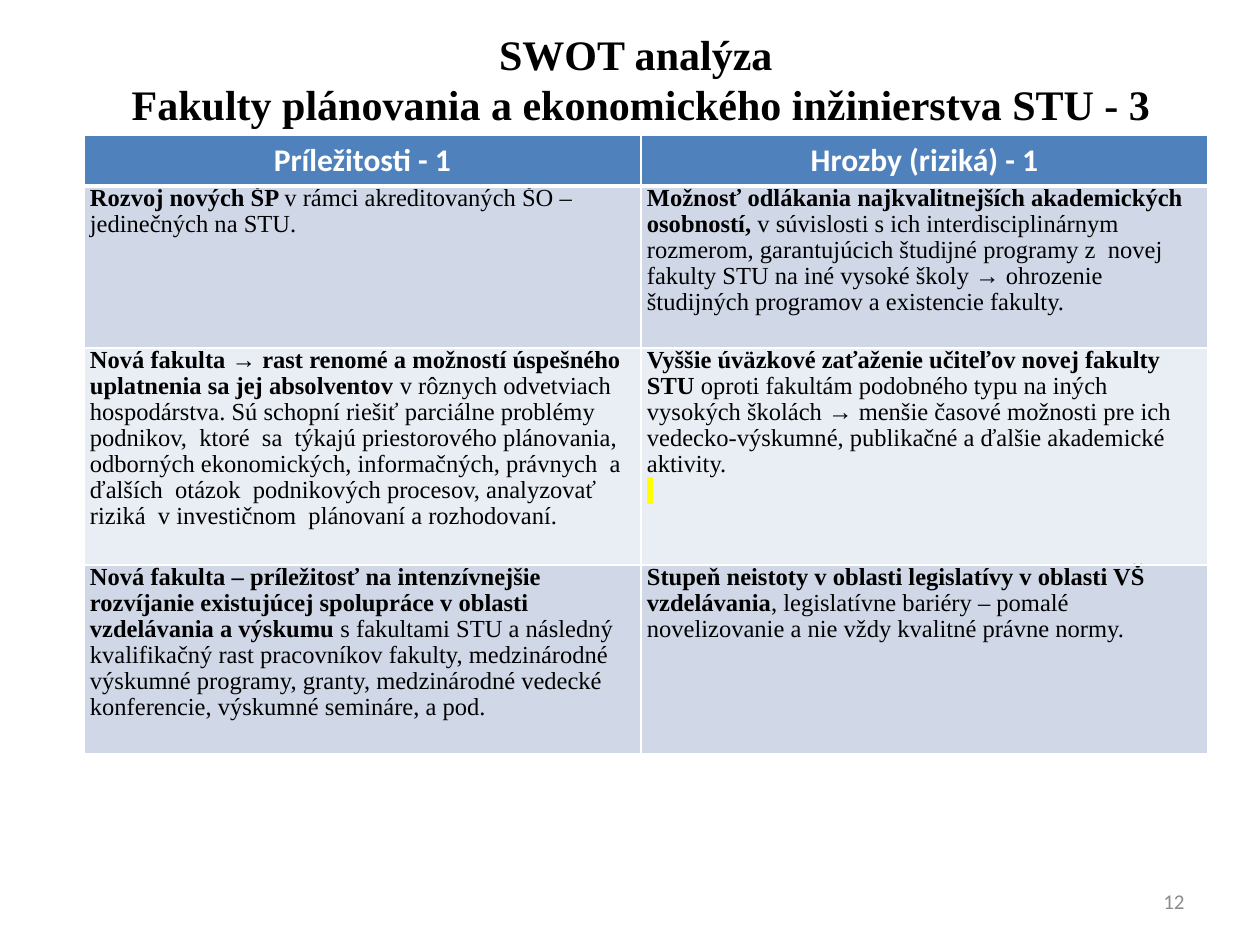
from dataclasses import dataclass

from lxml import etree
from pptx import Presentation
from pptx.dml.color import RGBColor
from pptx.enum.text import MSO_ANCHOR, MSO_AUTO_SIZE, PP_ALIGN
from pptx.oxml.ns import qn
from pptx.util import Emu, Pt

LEFT, CENTER, RIGHT = PP_ALIGN.LEFT, PP_ALIGN.CENTER, PP_ALIGN.RIGHT
TOP, MIDDLE = MSO_ANCHOR.TOP, MSO_ANCHOR.MIDDLE
NO_FIT = MSO_AUTO_SIZE.NONE
TITLE_ONLY = 5
PX = 914400 // 126


@dataclass(frozen=True)
class Theme:
    serif: str = "Times New Roman"
    sans: str = "Calibri"
    title_size: int = 24
    head_size: int = 18
    body_size: int = 14
    number_size: int = 12
    text: str = "000000"
    white: str = "FFFFFF"
    head: str = "4F81BD"
    bands: tuple = ("D0D8E8", "E9EDF4")
    muted: str = "8C8C8C"
    marker: str = "FFFF00"


T = Theme()

TITLE = ("SWOT analýza ",
         "Fakulty plánovania a ekonomického inžinierstva STU - 3")
HEADS = ("Príležitosti - 1", "Hrozby (riziká) - 1")
# Each cell: bold lead, regular rest, whether a marked line follows
ROWS = (
    (("Rozvoj nových ŠP ",
      "v rámci akreditovaných ŠO – jedinečných na STU.", False),
     ("Možnosť odlákania najkvalitnejších akademických osobností,",
      " v súvislosti s ich interdisciplinárnym rozmerom, garantujúcich "
      "študijné programy z  novej fakulty STU na iné vysoké školy → "
      "ohrozenie  študijných programov a existencie fakulty.", False)),
    (("Nová fakulta → rast renomé a možností úspešného uplatnenia sa jej "
      "absolventov ",
      "v rôznych odvetviach hospodárstva. Sú schopní riešiť parciálne "
      "problémy podnikov,  ktoré  sa  týkajú priestorového plánovania, "
      "odborných ekonomických, informačných, právnych  a  ďalších  otázok  "
      "podnikových procesov, analyzovať riziká  v investičnom  plánovaní "
      "a rozhodovaní.", False),
     ("Vyššie úväzkové zaťaženie učiteľov novej fakulty STU ",
      "oproti fakultám podobného typu na iných vysokých školách → menšie "
      "časové možnosti pre ich vedecko-výskumné, publikačné a ďalšie "
      "akademické aktivity.", True)),
    (("Nová fakulta – príležitosť na intenzívnejšie rozvíjanie existujúcej "
      "spolupráce v oblasti vzdelávania a výskumu ",
      "s fakultami STU a následný kvalifikačný rast pracovníkov fakulty, "
      "medzinárodné výskumné programy, granty, medzinárodné vedecké "
      "konferencie, výskumné semináre, a pod.", False),
     ("Stupeň neistoty v oblasti legislatívy v oblasti VŠ vzdelávania",
      ", legislatívne bariéry – pomalé novelizovanie a nie vždy kvalitné "
      "právne normy.", False)),
)
COL_WIDTHS = (557, 567)
ROW_HEIGHTS = (51, 162, 217, 189)


def px(n):
    return Emu(n * PX)


def add_text(p, text, *, size=T.body_size, font=T.serif, color=T.text,
             bold=False, align=LEFT, spacing=None, mark=None):
    """Append a formatted run to paragraph p."""
    p.alignment = align
    if spacing:
        p.line_spacing = spacing
    r = p.add_run()
    r.text = text
    r.font.size, r.font.name, r.font.bold = Pt(size), font, bold
    r.font.color.rgb = RGBColor.from_string(color)
    if mark:
        hl = etree.Element(qn("a:highlight"))
        etree.SubElement(hl, qn("a:srgbClr"), val=mark)
        r.font._element.find(qn("a:solidFill")).addnext(hl)


def add_border(cell, side, width, color):
    ln = etree.SubElement(cell._tc.get_or_add_tcPr(), qn("a:ln" + side),
                          w=str(Pt(width)))
    fill = etree.SubElement(ln, qn("a:solidFill"))
    etree.SubElement(fill, qn("a:srgbClr"), val=color)


def style_cell(cell, color, top=1, bottom=1):
    for side, width in (("L", 1), ("R", 1), ("T", top), ("B", bottom)):
        add_border(cell, side, width, T.white)
    cell.fill.solid()
    cell.fill.fore_color.rgb = RGBColor.from_string(color)


def fill_body_cell(cell, lead, rest, marked):
    cell.margin_left = cell.margin_right = px(6)
    cell.margin_top = cell.margin_bottom = 0
    cell.vertical_anchor = TOP
    tf = cell.text_frame
    p = tf.paragraphs[0]
    add_text(p, lead, bold=True, spacing=0.96)
    add_text(p, rest, spacing=0.96)
    if marked:
        add_text(tf.add_paragraph(), "\u00a0", bold=True, spacing=0.96,
                 mark=T.marker)


def set_title(s, x, y, w, h):
    sp = s.shapes.title
    sp.left, sp.top, sp.width, sp.height = map(px, (x, y, w, h))
    tf = sp.text_frame
    tf.word_wrap, tf.auto_size, tf.vertical_anchor = True, NO_FIT, MIDDLE
    p = tf.paragraphs[0]
    for i, line in enumerate(TITLE):
        if i:
            p.add_line_break()
            # Keep the break at the size of the title
            etree.SubElement(p._p[-1], qn("a:rPr"), sz=str(T.title_size * 100))
        add_text(p, line, size=T.title_size, bold=True, align=CENTER)


def add_swot_table(s, x, y):
    w, h = sum(COL_WIDTHS), sum(ROW_HEIGHTS)
    table = s.shapes.add_table(len(ROW_HEIGHTS), len(COL_WIDTHS),
                               px(x), px(y), px(w), px(h)).table
    for col, width in zip(table.columns, COL_WIDTHS):
        col.width = px(width)
    for row, height in zip(table.rows, ROW_HEIGHTS):
        row.height = px(height)
    # Header row
    for c, head in enumerate(HEADS):
        cell = table.cell(0, c)
        style_cell(cell, T.head, bottom=3)
        add_text(cell.text_frame.paragraphs[0], head, size=T.head_size,
                 font=T.sans, color=T.white, bold=True, align=CENTER)
    # Banded body rows
    for i, row in enumerate(ROWS):
        for c, content in enumerate(row):
            cell = table.cell(i + 1, c)
            style_cell(cell, T.bands[i % 2], top=1 if i else 3)
            fill_body_cell(cell, *content)


def add_number(s, x, y, w, h):
    tf = s.shapes.add_textbox(px(x), px(y), px(w), px(h)).text_frame
    tf.word_wrap, tf.vertical_anchor = True, MIDDLE
    add_text(tf.paragraphs[0], "12", size=T.number_size, font=T.sans,
             color=T.muted, align=RIGHT)


def main():
    prs = Presentation()
    prs.slide_width, prs.slide_height = px(1260), px(945)
    s = prs.slides.add_slide(prs.slide_layouts[TITLE_ONLY])
    set_title(s, 74, 16, 1134, 125)
    add_swot_table(s, 84, 135)
    add_number(s, 903, 876, 294, 50)
    prs.save("out.pptx")


if __name__ == "__main__":
    main()
